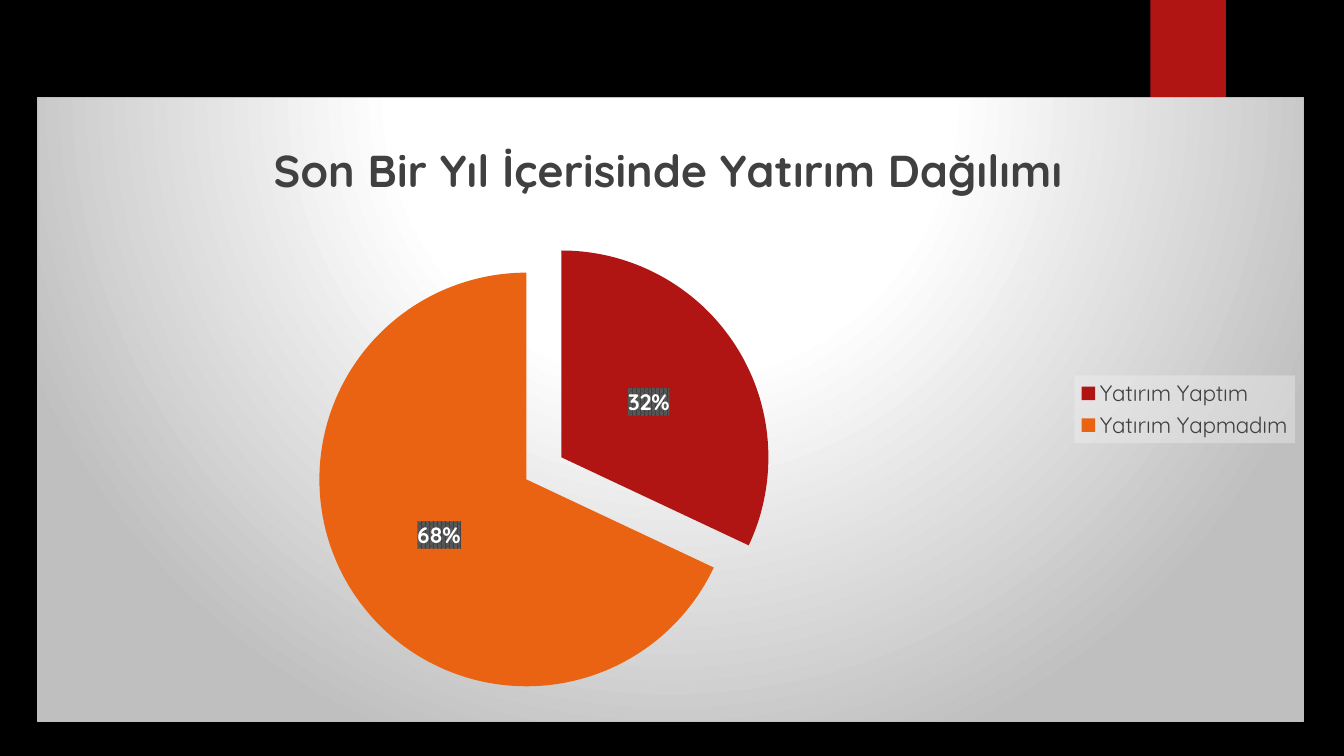
from dataclasses import dataclass

from pptx import Presentation
from pptx.chart.data import CategoryChartData
from pptx.dml.color import RGBColor
from pptx.enum.chart import XL_CHART_TYPE, XL_LABEL_POSITION, XL_LEGEND_POSITION
from pptx.enum.shapes import MSO_SHAPE
from pptx.oxml import parse_xml
from pptx.oxml.ns import nsdecls, qn
from pptx.util import Inches, Pt

PIE = XL_CHART_TYPE.PIE
LEGEND_RIGHT = XL_LEGEND_POSITION.RIGHT
LABEL_CENTER = XL_LABEL_POSITION.CENTER
RECTANGLE = MSO_SHAPE.RECTANGLE


@dataclass(frozen=True)
class Theme:
    font: str = "Quicksand"
    background: str = "000000"
    invested: str = "B01513"
    not_invested: str = "EA6312"
    white: str = "FFFFFF"
    silver: str = "BFBFBF"
    text: str = "404040"
    label_stripe: str = "595959"
    legend_back: str = "F2F2F2"
    base_size: int = 10
    body_size: int = 16
    title_size: int = 32


THEME = Theme()
TITLE = "Son Bir Yıl İçerisinde Yatırım Dağılımı"
SHARES = {"Yatırım Yaptım": 32, "Yatırım Yapmadım": 68}
EXPLOSION = 10


def style_font(font, size, color, bold=False):
    font.name = THEME.font
    font.size = Pt(size)
    font.bold = bold
    font.color.rgb = RGBColor.from_string(color)


def solid_xml(color, opacity=100):
    return (f'<a:solidFill><a:srgbClr val="{color}">'
            f'<a:alpha val="{opacity * 1000}"/></a:srgbClr></a:solidFill>')


def backdrop_xml():
    stops = ((0, THEME.white), (39, THEME.white), (100, THEME.silver))
    stop_list = "".join(
        f'<a:gs pos="{position * 1000}"><a:srgbClr val="{color}"/></a:gs>'
        for position, color in stops)
    return (f'<a:gradFill><a:gsLst>{stop_list}</a:gsLst><a:path path="circle">'
            '<a:fillToRect l="50000" t="-80000" r="50000" b="180000"/></a:path></a:gradFill>'
            f'<a:ln w="{Pt(0.75)}">{solid_xml(THEME.silver)}</a:ln>')


def label_back_xml():
    return ('<a:pattFill prst="pct75">'
            f'<a:fgClr><a:srgbClr val="{THEME.text}"/></a:fgClr>'
            f'<a:bgClr><a:srgbClr val="{THEME.label_stripe}"/></a:bgClr></a:pattFill>')


def fill_part(part, fill_xml):
    properties = parse_xml(f'<c:spPr {nsdecls("c", "a")}>{fill_xml}</c:spPr>')
    part.find(qn("c:txPr")).addprevious(properties)


def place_part(part, index, target="", **fractions):
    for existing in part.findall(qn("c:layout")):
        part.remove(existing)
    target_xml = f'<c:layoutTarget val="{target}"/>' if target else ""
    modes = "".join(f'<c:{side}Mode val="edge"/>' for side in "xy")
    sizes = "".join(f'<c:{side} val="{value}"/>' for side, value in fractions.items())
    part.insert(index, parse_xml(
        f'<c:layout {nsdecls("c")}><c:manualLayout>{target_xml}{modes}{sizes}'
        '</c:manualLayout></c:layout>'))


def add_accent_tab(slide):
    tab = slide.shapes.add_shape(
        RECTANGLE, Inches(11.41), Inches(0), Inches(0.75), Inches(1.25))
    tab.shadow.inherit = False
    tab.fill.solid()
    tab.fill.fore_color.rgb = RGBColor.from_string(THEME.invested)
    tab.line.fill.background()


def add_title(chart):
    chart.has_title = True
    heading = chart.chart_title.text_frame.paragraphs[0]
    heading.text = TITLE
    style_font(heading.font, THEME.title_size, THEME.text, bold=True)
    place_part(chart.chart_title._element, 1, x=0.18, y=0.05)


def add_legend(chart):
    chart.has_legend = True
    legend = chart.legend
    legend.position = LEGEND_RIGHT
    legend.include_in_layout = False
    style_font(legend.font, THEME.body_size, THEME.text)
    fill_part(legend._element, solid_xml(THEME.legend_back, 39))


def style_slices(plot):
    plot.vary_by_categories = True
    shares = plot.series[0]
    for index, color in enumerate((THEME.invested, THEME.not_invested)):
        slice_format = shares.points[index].format
        slice_format.fill.solid()
        slice_format.fill.fore_color.rgb = RGBColor.from_string(color)
        slice_format.line.fill.background()
    shares._element.find(qn("c:tx")).addnext(
        parse_xml(f'<c:explosion {nsdecls("c")} val="{EXPLOSION}"/>'))

    labels = shares.data_labels
    labels.show_percentage = True
    labels.show_value = False
    labels.number_format = "0%"
    labels.number_format_is_linked = False
    labels.position = LABEL_CENTER
    style_font(labels.font, THEME.body_size, THEME.white, bold=True)
    fill_part(labels._element, label_back_xml())


def add_investment_chart(slide):
    investment_data = CategoryChartData()
    investment_data.categories = list(SHARES)
    investment_data.add_series("Series 1", list(SHARES.values()))
    chart = slide.shapes.add_chart(
        PIE, Inches(0.37), Inches(0.96), Inches(12.56), Inches(6.2),
        investment_data).chart
    style_font(chart.font, THEME.base_size, THEME.white)
    fill_part(chart._chartSpace, backdrop_xml())
    add_title(chart)
    add_legend(chart)
    style_slices(chart.plots[0])
    plot_area = chart._chartSpace.chart.plotArea
    place_part(plot_area, 0, "inner", x=0.22, y=0.23, w=0.36, h=0.73)


def main():
    presentation = Presentation()
    presentation.slide_width = Inches(13.33)
    presentation.slide_height = Inches(7.5)
    slide = presentation.slides.add_slide(presentation.slide_layouts[6])
    slide.background.fill.solid()
    slide.background.fill.fore_color.rgb = RGBColor.from_string(THEME.background)
    add_accent_tab(slide)
    add_investment_chart(slide)
    presentation.save("out.pptx")


if __name__ == "__main__":
    main()
